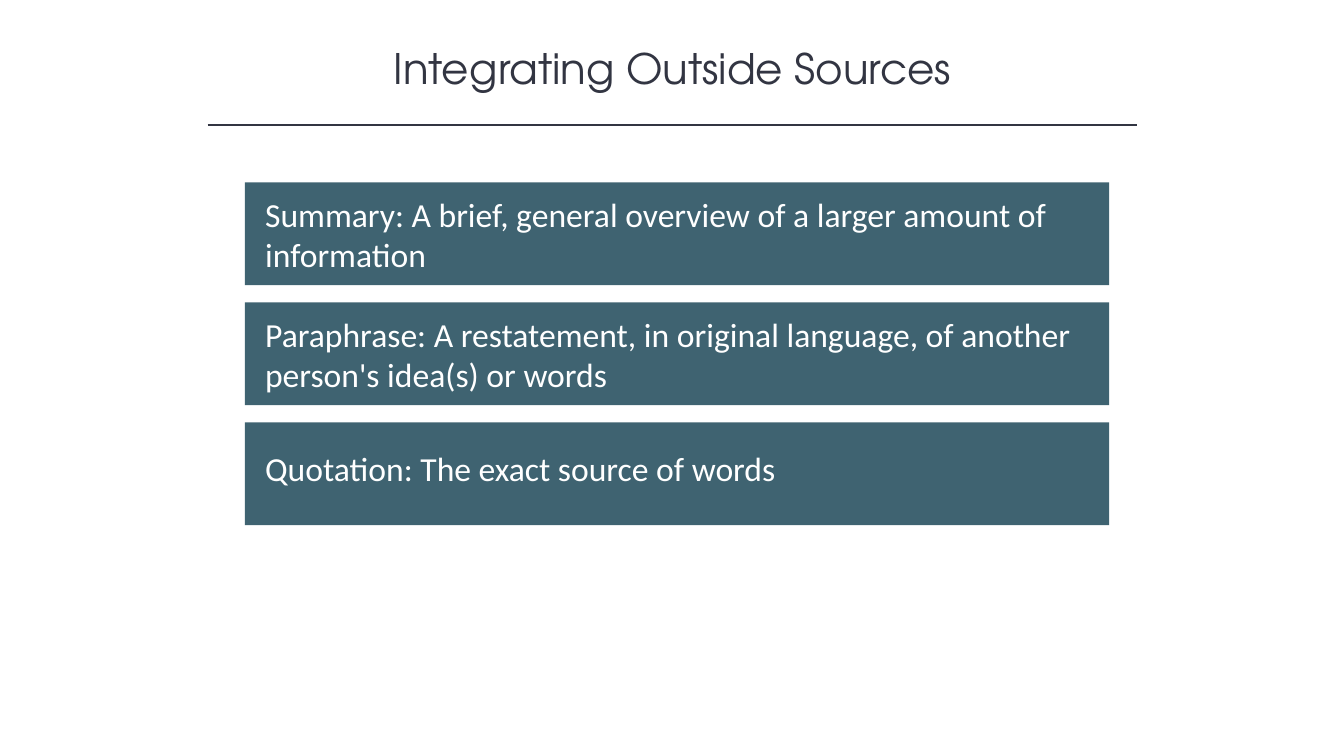
from lxml import etree
from pptx import Presentation
from pptx.dml.color import RGBColor
from pptx.enum.shapes import MSO_CONNECTOR, MSO_SHAPE
from pptx.enum.text import MSO_ANCHOR, PP_ALIGN
from pptx.oxml.ns import qn
from pptx.util import Inches, Pt

RECTANGLE = MSO_SHAPE.RECTANGLE
STRAIGHT = MSO_CONNECTOR.STRAIGHT
MIDDLE = MSO_ANCHOR.MIDDLE
LEFT, CENTER = PP_ALIGN.LEFT, PP_ALIGN.CENTER
TITLE_ONLY = 5

COLORS = {"ink": "323542", "panel": "3F6371", "white": "FFFFFF"}


def color(name):
    return RGBColor.from_string(COLORS[name])


def style_text(paragraph, font_name, size, color_name, alignment):
    paragraph.alignment = alignment
    paragraph.font.name = font_name
    paragraph.font.size = Pt(size)
    paragraph.font.color.rgb = color(color_name)


prs = Presentation()
prs.slide_width = Inches(13.33)
prs.slide_height = Inches(7.5)
slide = prs.slides.add_slide(prs.slide_layouts[TITLE_ONLY])
slide.background.fill.solid()
slide.background.fill.fore_color.rgb = color("white")

heading = slide.shapes.title
heading.left, heading.top = Inches(1.67), Inches(0.37)
heading.width, heading.height = Inches(10), Inches(0.61)
heading.text_frame.text = "Integrating Outside Sources"
heading.text_frame.vertical_anchor = MIDDLE
style_text(heading.text_frame.paragraphs[0], "TeX Gyre Adventor", 30, "ink", CENTER)

divider = slide.shapes.add_connector(
    STRAIGHT, Inches(2.06), Inches(1.24), Inches(11.28), Inches(1.24)
)
divider.line.color.rgb = color("ink")
divider.line.width = Pt(1)
etree.SubElement(divider.element.spPr, qn("a:effectLst"))

FIRST_TOP, PITCH = 1.81, 1.19
definitions = [
    ("Summary: A brief, general overview of a larger amount of information", 0.05),
    ("Paraphrase: A restatement, in original language, of another person's idea(s) or words", 0.05),
    ("Quotation: The exact source of words", 0.17),
]
for row, (definition, bottom_inset) in enumerate(definitions):
    panel = slide.shapes.add_shape(
        RECTANGLE, Inches(2.43), Inches(FIRST_TOP + row * PITCH), Inches(8.57), Inches(1.02)
    )
    panel.shadow.inherit = False
    panel.fill.solid()
    panel.fill.fore_color.rgb = color("panel")
    panel.line.fill.background()
    frame = panel.text_frame
    frame.word_wrap = True
    frame.vertical_anchor = MIDDLE
    frame.margin_left, frame.margin_right = Inches(0.2), Inches(0.27)
    frame.margin_top, frame.margin_bottom = Inches(0.05), Inches(bottom_inset)
    frame.text = definition
    style_text(frame.paragraphs[0], "Calibri", 24, "white", LEFT)

prs.save("out.pptx")
